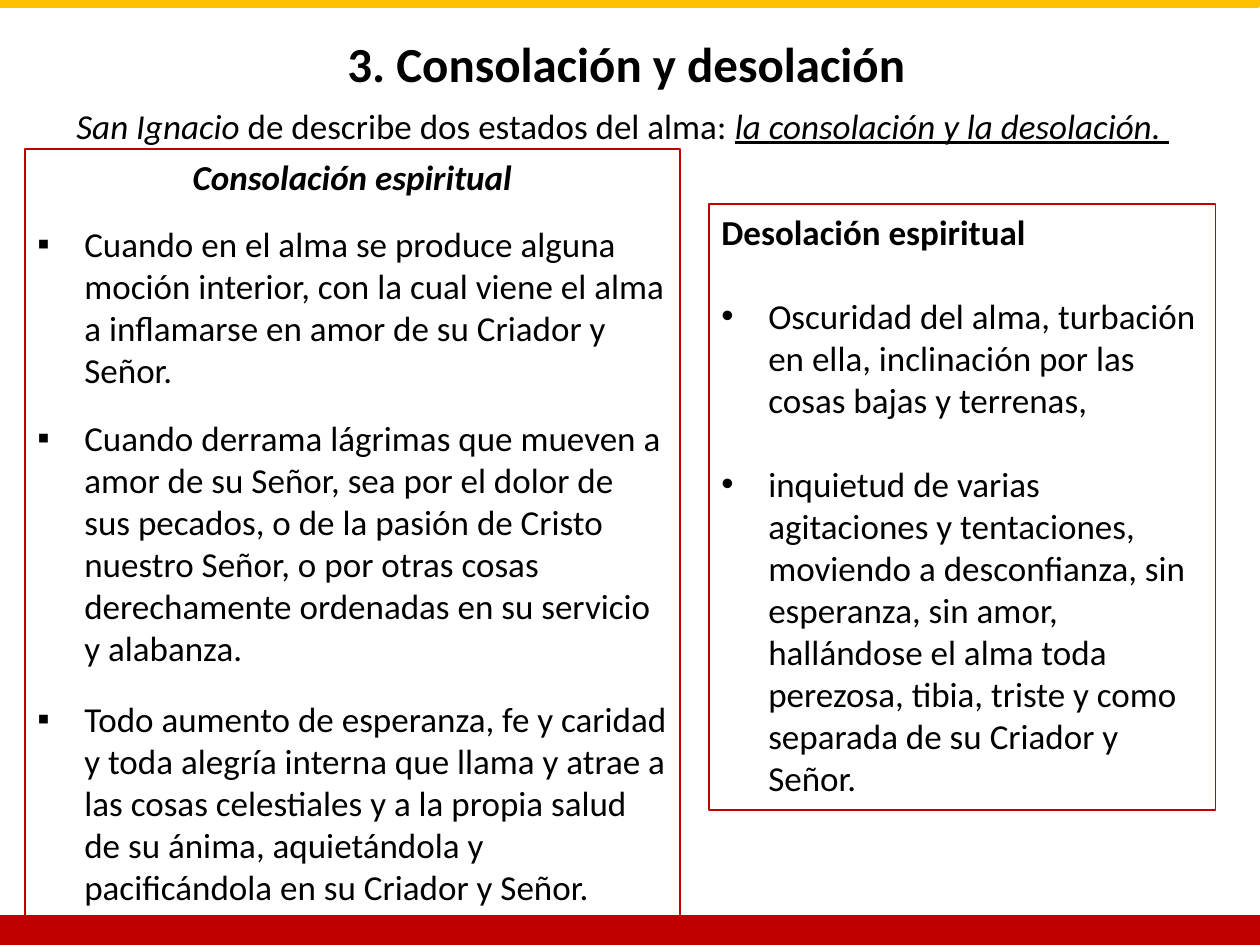
from lxml.etree import SubElement
from pptx import Presentation
from pptx.dml.color import RGBColor
from pptx.enum.shapes import MSO_SHAPE
from pptx.enum.text import MSO_ANCHOR, PP_ALIGN
from pptx.oxml.ns import qn
from pptx.util import Pt

PX = 914400 // 126
GOLD = RGBColor(0xFF, 0xC0, 0x00)
RED = RGBColor(0xC0, 0x00, 0x00)
BLACK = RGBColor(0, 0, 0)
INDENT = 47 * PX


def add_rect(x, y, w, h, line, width, fill=None):
    sp = s.shapes.add_shape(MSO_SHAPE.RECTANGLE, x * PX, y * PX, w * PX, h * PX)
    sp.shadow.inherit = False
    sp.line.color.rgb = line
    sp.line.width = Pt(width)
    if fill is None:
        sp.fill.background()
    else:
        sp.fill.solid()
        sp.fill.fore_color.rgb = fill
    return sp


def add_run(p, text, size=20, bold=False, italic=False, underline=False):
    r = p.add_run()
    r.text = text
    f = r.font
    f.name, f.size, f.color.rgb = "Calibri", Pt(size), BLACK
    f.bold, f.italic, f.underline = bold, italic, underline


prs = Presentation()
prs.slide_width, prs.slide_height = 1260 * PX, 945 * PX
s = prs.slides.add_slide(prs.slide_layouts[6])

# Top and bottom bands
add_rect(-2, 0, 1260, 6, GOLD, 2, GOLD)
add_rect(0, 917, 1260, 28, RED, 2, RED)

# Title and introduction
tf = s.shapes.add_textbox(335 * PX, 27 * PX, 590 * PX, 72 * PX).text_frame
tf.word_wrap = False
add_run(tf.paragraphs[0], "3. Consolación y desolación", 28, bold=True)

tf = s.shapes.add_textbox(64 * PX, 98 * PX, 1132 * PX, 55 * PX).text_frame
tf.word_wrap = True
p = tf.paragraphs[0]
add_run(p, "San Ignacio ", italic=True)
add_run(p, "de describe dos estados del alma: ")
add_run(p, "la consolación y la desolación. ", italic=True, underline=True)

# Two states: box, heading, alignment, italic, bullet, (space before, text)
STATES = [
    ((25, 149, 655, 772), "Consolación espiritual", PP_ALIGN.CENTER, True, "▪", [
        (14.5, "Cuando en el alma se produce alguna moción interior, con la cual "
               "viene el alma a inflamarse en amor de su Criador y Señor."),
        (14.5, "Cuando derrama lágrimas que mueven a amor de su Señor, sea por el "
               "dolor de sus pecados, o de la pasión de Cristo nuestro Señor, o por "
               "otras cosas derechamente ordenadas en su servicio y alabanza."),
        (17, "Todo aumento de esperanza, fe y caridad y toda alegría interna que "
             "llama y atrae a las cosas celestiales y a la propia salud de su ánima, "
             "aquietándola y pacificándola en su Criador y Señor."),
    ]),
    ((709, 204, 507, 606), "Desolación espiritual", PP_ALIGN.LEFT, False, "•", [
        (24, "Oscuridad del alma, turbación en ella, inclinación por las cosas "
             "bajas y terrenas,"),
        (24, "inquietud de varias agitaciones y tentaciones, moviendo a "
             "desconfianza, sin esperanza, sin amor, hallándose el alma toda "
             "perezosa, tibia, triste y como separada de su Criador y Señor."),
    ]),
]

for box, heading, align, italic, bullet, items in STATES:
    tf = add_rect(*box, RED, 0.75).text_frame
    tf.word_wrap = True
    tf.vertical_anchor = MSO_ANCHOR.TOP
    p = tf.paragraphs[0]
    p.alignment = align
    add_run(p, heading, bold=True, italic=italic)
    for space, text in items:
        p = tf.add_paragraph()
        p.alignment = PP_ALIGN.LEFT
        p.space_before = Pt(space)
        pPr = p._p.get_or_add_pPr()
        pPr.set("marL", str(INDENT))
        pPr.set("indent", str(-INDENT))
        SubElement(pPr, qn("a:buFont")).set("typeface", "Arial")
        SubElement(pPr, qn("a:buChar")).set("char", bullet)
        add_run(p, text)

prs.save("out.pptx")
